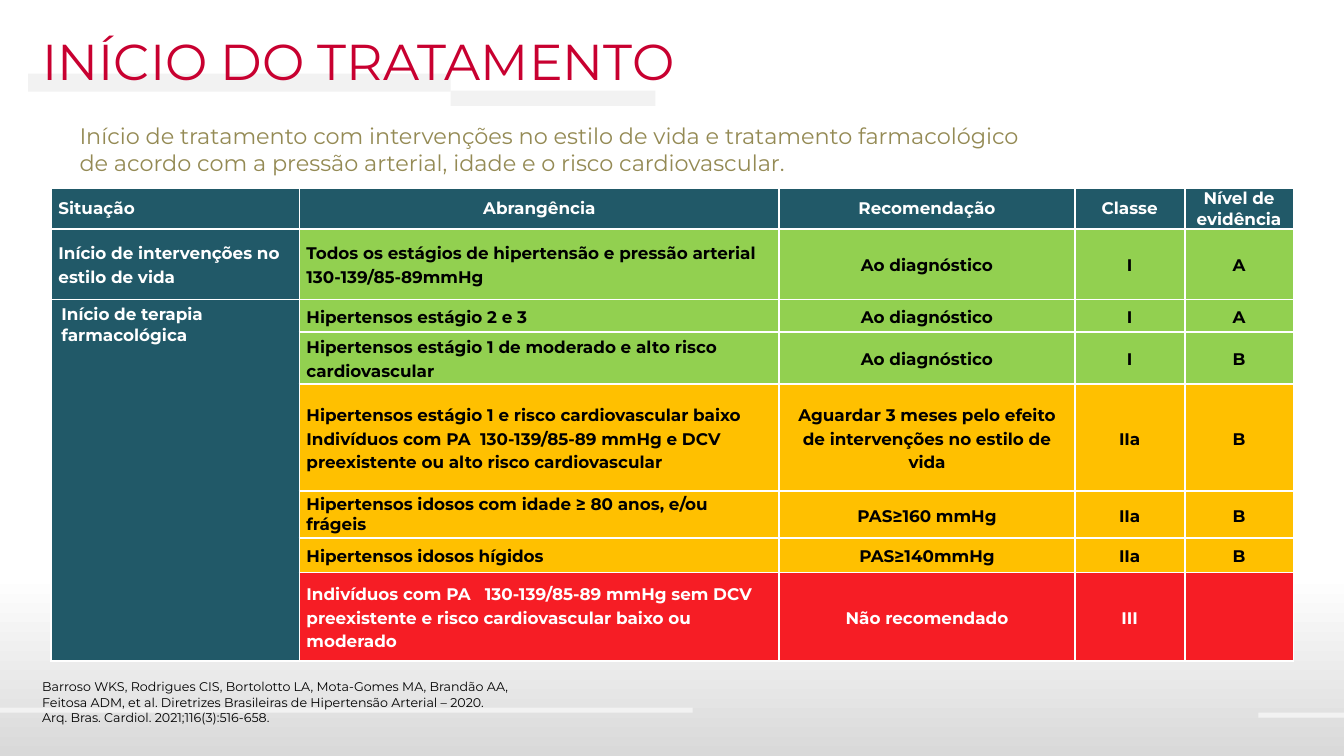
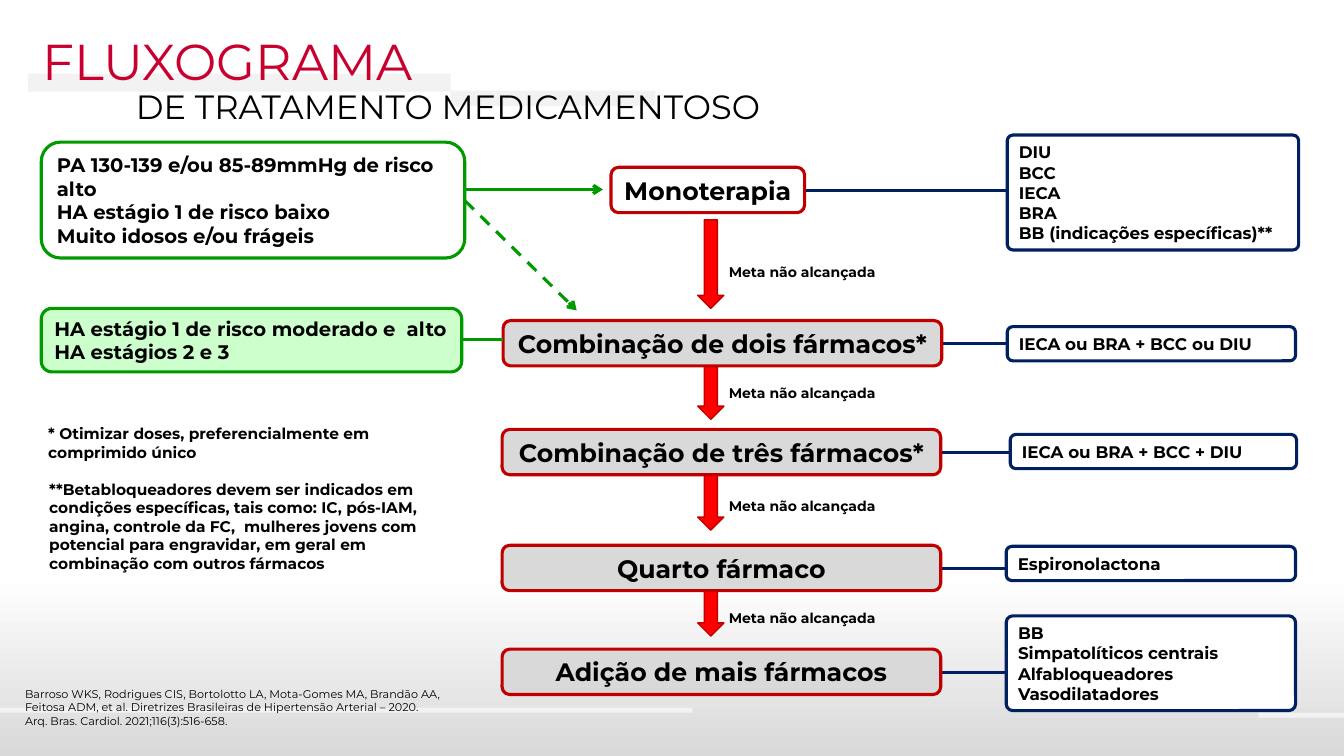
from lxml.etree import SubElement
from pptx import Presentation
from pptx.dml.color import RGBColor
from pptx.enum.dml import MSO_LINE as Dash
from pptx.enum.shapes import MSO_CONNECTOR as Connector, MSO_SHAPE as Shape
from pptx.enum.text import MSO_ANCHOR as Anchor, PP_ALIGN as Align
from pptx.oxml.ns import qn
from pptx.util import Inches, Pt

FONT = "Montserrat"
COLORS = {
    "white": "FFFFFF", "black": "000000", "title": "C80030", "lead": "948A54",
    "band": "F2F2F2", "shade": "D9D9D9", "teal": "215968", "lime": "92D050",
    "amber": "FFC000", "alert": "F61D25", "green": "009900", "mint": "CCFFCC",
    "navy": "002060", "crimson": "C00000", "red": "FF0000",
}
CITATION = [
    "Barroso WKS, Rodrigues CIS, Bortolotto LA, Mota-Gomes MA, Brandão AA,",
    "Feitosa ADM, et al. Diretrizes Brasileiras de Hipertensão Arterial – 2020.",
    "Arq. Bras. Cardiol. 2021;116(3):516-658.",
]
# Left, top, width, height of the decorative bands
BANDS = [(0.28, 0.73, 4.19, 0.18), (4.47, 0.9, 2.03, 0.15),
         (-0.02, 7.02, 6.89, 0.05), (12.48, 7.07, 0.85, 0.05)]

COLUMN_WIDTHS = [2.46, 4.76, 2.93, 1.09, 1.08]
HEADINGS = ["Situação", "Abrangência", "Recomendação", "Classe", "Nível de evidência"]
# Height, fill, text colour, line spacing, cells from the second column on
RECOMMENDATIONS = [
    (0.7, "lime", "black", 1.15,
     ["Todos os estágios de hipertensão e pressão arterial 130-139/85-89mmHg"],
     "Ao diagnóstico", "I", "A"),
    (0.32, "lime", "black", 1.15, ["Hipertensos estágio 2 e 3"], "Ao diagnóstico", "I", "A"),
    (0.52, "lime", "black", 1.15,
     ["Hipertensos estágio 1 de moderado e alto risco cardiovascular"],
     "Ao diagnóstico", "I", "B"),
    (1.06, "amber", "black", 1.15,
     ["Hipertensos estágio 1 e risco cardiovascular baixo",
      "Indivíduos com PA  130-139/85-89 mmHg e DCV preexistente ou alto risco cardiovascular"],
     "Aguardar 3 meses pelo efeito de intervenções no estilo de vida", "IIa", "B"),
    (0.47, "amber", "black", 1,
     ["Hipertensos idosos com idade ≥ 80 anos, e/ou frágeis"], "PAS≥160 mmHg", "IIa", "B"),
    (0.34, "amber", "black", 1.15,
     ["Hipertensos idosos hígidos"], "PAS≥140mmHg", "IIa", "B"),
    (0.88, "alert", "white", 1.15,
     ["Indivíduos com PA   130-139/85-89 mmHg sem DCV preexistente e risco "
      "cardiovascular baixo ou moderado"], "Não recomendado", "III", ""),
]

# Step: text, left, top, width, fill; drugs: lines, left, top, width, height, corner
STEPS = [
    (("Monoterapia", 1.08, 0, 1.92, "white"),
     (["DIU", "BCC", "IECA", "BRA", "BB (indicações específicas)**"],
      5.01, -0.32, 2.89, 1.14, 0.05)),
    (("Combinação de dois fármacos*", 0.01, 1.52, 4.35, "shade"),
     (["IECA ou BRA + BCC ou DIU"], 5.01, 1.58, 2.86, 0.34, None)),
    (("Combinação de três fármacos*", 0, 2.6, 4.35, "shade"),
     (["IECA ou BRA + BCC + DIU"], 5.04, 2.65, 2.84, 0.34, None)),
    (("Quarto fármaco", 0, 3.75, 4.35, "shade"),
     (["Espironolactona"], 5, 3.76, 2.87, 0.34, None)),
    (("Adição de mais fármacos", 0, 4.78, 4.35, "shade"),
     (["BB", "Simpatolíticos centrais", "Alfabloqueadores", "Vasodilatadores"],
      5, 4.45, 2.87, 0.94, 0.07)),
]
# Arrow top, arrow bottom, label top
TRANSITIONS = [(0.52, 1.4, 0.91), (1.97, 2.5, 2.11), (3.05, 3.6, 3.23), (4.2, 4.65, 4.34)]


def rgb(name):
    return RGBColor.from_string(COLORS[name])


def write(frame, lines, size, color="black", bold=False, align=Align.LEFT, spacing=None):
    for index, line in enumerate(lines):
        paragraph = frame.paragraphs[0] if index == 0 else frame.add_paragraph()
        paragraph.alignment = align
        paragraph.line_spacing = spacing
        paragraph.font.size = Pt(size)
        if not line:
            continue
        run = paragraph.add_run()
        run.text = line
        font = run.font
        font.name, font.size, font.bold = FONT, Pt(size), bold
        font.color.rgb = rgb(color)


def add_text(slide, box, lines, size, wrap=True, **style):
    frame = slide.shapes.add_textbox(*map(Inches, box)).text_frame
    frame.word_wrap = wrap
    write(frame, lines, size, **style)


def add_block(slide, preset, box, fill, line=None, width=2.25):
    block = slide.shapes.add_shape(preset, *map(Inches, box))
    block.shadow.inherit = False
    block.fill.solid()
    block.fill.fore_color.rgb = rgb(fill)
    if line:
        block.line.color.rgb = rgb(line)
        block.line.width = Pt(width)
    else:
        block.line.fill.background()
    return block


def add_box(slide, box, lines, size, fill, line, align=Align.LEFT, wrap=True, corner=None):
    block = add_block(slide, Shape.ROUNDED_RECTANGLE, box, fill, line)
    if corner:
        block.adjustments[0] = corner
    block.text_frame.word_wrap = wrap
    block.text_frame.vertical_anchor = Anchor.MIDDLE
    write(block.text_frame, lines, size, bold=True, align=align)


def add_line(slide, start, end, color, arrow=False, dashed=False):
    link = slide.shapes.add_connector(Connector.STRAIGHT, *map(Inches, start + end))
    link.line.color.rgb = rgb(color)
    link.line.width = Pt(2.25)
    if dashed:
        link.line.dash_style = Dash.DASH
    if arrow:
        SubElement(link.line._get_or_add_ln(), qn("a:tailEnd"), type="arrow")
    SubElement(link._element.spPr, qn("a:effectLst"))


def style_theme(prs):
    """Background gradient and title position shared by the slides."""
    fill = prs.slide_master.background.fill
    fill.gradient()
    fill.gradient_angle = 270
    for stop, position, color in zip(fill.gradient_stops, (0.76, 1), ("white", "shade")):
        stop.position = position
        stop.color.rgb = rgb(color)
    layout = prs.slide_layouts.get_by_name("Title Only")
    title = layout.placeholders[0]
    title.left, title.top, title.width, title.height = map(Inches, (0.32, 0.25, 11.46, 0.71))
    title.text_frame.vertical_anchor = Anchor.TOP
    return layout


def add_slide(prs, layout, title):
    slide = prs.slides.add_slide(layout)
    if len(prs.slides) == 1:
        # The bands belong to the layout, behind its placeholders
        for band in BANDS:
            block = add_block(slide, Shape.RECTANGLE, band, "band")
            layout.shapes._spTree.insert(2, block._element)
    write(slide.shapes.title.text_frame, [title], 36, color="title")
    return slide


def fill_cell(cell, lines, fill, color="white", margins=(0.07, 0), anchor=Anchor.MIDDLE, **style):
    properties = cell._tc.get_or_add_tcPr()
    for side in ("lnL", "lnR", "lnT", "lnB"):
        border = SubElement(properties, qn("a:" + side), w=str(Pt(1.5)))
        solid = SubElement(border, qn("a:solidFill"))
        SubElement(solid, qn("a:srgbClr"), val=COLORS["white"])
    cell.fill.solid()
    cell.fill.fore_color.rgb = rgb(fill)
    cell.margin_left = cell.margin_right = Inches(margins[0])
    cell.margin_top = cell.margin_bottom = Inches(margins[1])
    cell.vertical_anchor = anchor
    write(cell.text_frame, lines, 12, color=color, bold=True, **style)


def recommendation_table(slide, left, top):
    heights = [0.37] + [row[0] for row in RECOMMENDATIONS]
    box = (left, top, sum(COLUMN_WIDTHS), sum(heights))
    table = slide.shapes.add_table(len(heights), len(COLUMN_WIDTHS),
                                   *map(Inches, box)).table
    for column, width in zip(table.columns, COLUMN_WIDTHS):
        column.width = Inches(width)
    for row, height in zip(table.rows, heights):
        row.height = Inches(height)
    # Header row
    for index, heading in enumerate(HEADINGS):
        fill_cell(table.cell(0, index), [heading], "teal",
                  align=Align.CENTER if index else Align.LEFT)
    # Situation column
    fill_cell(table.cell(1, 0), ["Início de intervenções no estilo de vida"], "teal",
              spacing=1.15)
    table.cell(2, 0).merge(table.cell(len(RECOMMENDATIONS), 0))
    fill_cell(table.cell(2, 0), ["Início de terapia farmacológica"], "teal",
              margins=(0.1, 0.05), anchor=Anchor.TOP)
    # Recommendations
    for row, (_, fill, color, spacing, scope, *details) in enumerate(RECOMMENDATIONS, 1):
        fill_cell(table.cell(row, 1), scope, fill, color, spacing=spacing)
        for column, detail in enumerate(details, 2):
            fill_cell(table.cell(row, column), [detail], fill, color,
                      align=Align.CENTER, spacing=1.15)


def treatment_ladder(slide, left, top):
    # Arrows between steps
    for start, end, label in TRANSITIONS:
        add_block(slide, Shape.DOWN_ARROW, (left + 1.94, top + start, 0.26, end - start),
                  "red", "crimson", 1)
        add_text(slide, (left + 2.15, top + label, 1.67, 0.27), ["Meta não alcançada"], 10,
                 wrap=False, bold=True)
    # Steps, each linked to its drugs
    for (step, x, y, width, fill), (drugs, drug_x, drug_y, drug_w, drug_h, corner) in STEPS:
        middle = top + y + 0.23
        add_line(slide, (left + x + width, middle), (left + drug_x, middle), "navy")
        add_box(slide, (left + x, top + y, width, 0.45), [step], 18, fill, "crimson",
                align=Align.CENTER, wrap=False)
        add_box(slide, (left + drug_x, top + drug_y, drug_w, drug_h), drugs, 12,
                "white", "navy", corner=corner)


def patient_profiles(slide, left, top):
    add_box(slide, (left, top, 4.2, 1.15),
            ["PA 130-139 e/ou 85-89mmHg de risco alto", "HA estágio 1 de risco baixo",
             "Muito idosos e/ou frágeis"], 14, "white", "green")
    add_box(slide, (left, top + 1.65, 4.17, 0.63),
            ["HA estágio 1 de risco moderado e  alto", "HA estágios 2 e 3"], 14,
            "mint", "green", wrap=False)
    # Paths into the ladder
    add_line(slide, (left + 4.2, top + 0.47), (left + 5.57, top + 0.47), "green", arrow=True)
    add_line(slide, (left + 4.2, top + 0.58), (left + 5.31, top + 1.67), "green",
             arrow=True, dashed=True)
    add_line(slide, (left + 4.17, top + 1.96), (left + 4.58, top + 1.96), "green")


def drug_notes(slide, left, top):
    add_text(slide, (left, top, 3.95, 0.47),
             ["* Otimizar doses, preferencialmente em comprimido único"], 11, bold=True)
    add_text(slide, (left + 0.01, top + 0.55, 3.94, 1.03),
             ["**Betabloqueadores devem ser indicados em condições específicas, tais como: "
              "IC, pós-IAM,  angina, controle da FC,  mulheres jovens com potencial para "
              "engravidar, em geral em combinação com outros fármacos"], 11, bold=True)


def start_slide(prs, layout):
    slide = add_slide(prs, layout, "INÍCIO DO TRATAMENTO")
    add_text(slide, (0.69, 1.16, 11.01, 0.64),
             ["Início de tratamento com intervenções no estilo de vida e tratamento "
              "farmacológico ",
              "de acordo com a pressão arterial, idade e o risco cardiovascular."],
             16, color="lead", align=Align.JUSTIFY)
    recommendation_table(slide, 0.51, 1.87)
    add_text(slide, (0.32, 6.69, 6.69, 0.56), CITATION, 9)


def flowchart_slide(prs, layout):
    slide = add_slide(prs, layout, "FLUXOGRAMA")
    add_text(slide, (1.25, 0.8, 10.4, 0.5), ["DE TRATAMENTO MEDICAMENTOSO"], 24)
    treatment_ladder(slide, 4.98, 1.66)
    patient_profiles(slide, 0.41, 1.41)
    drug_notes(slide, 0.38, 4.16)
    add_text(slide, (0.15, 6.77, 4.98, 0.5), CITATION, 8)


def main():
    prs = Presentation()
    prs.slide_width, prs.slide_height = Inches(13.33), Inches(7.5)
    layout = style_theme(prs)
    start_slide(prs, layout)
    flowchart_slide(prs, layout)
    prs.save("out.pptx")


if __name__ == "__main__":
    main()
